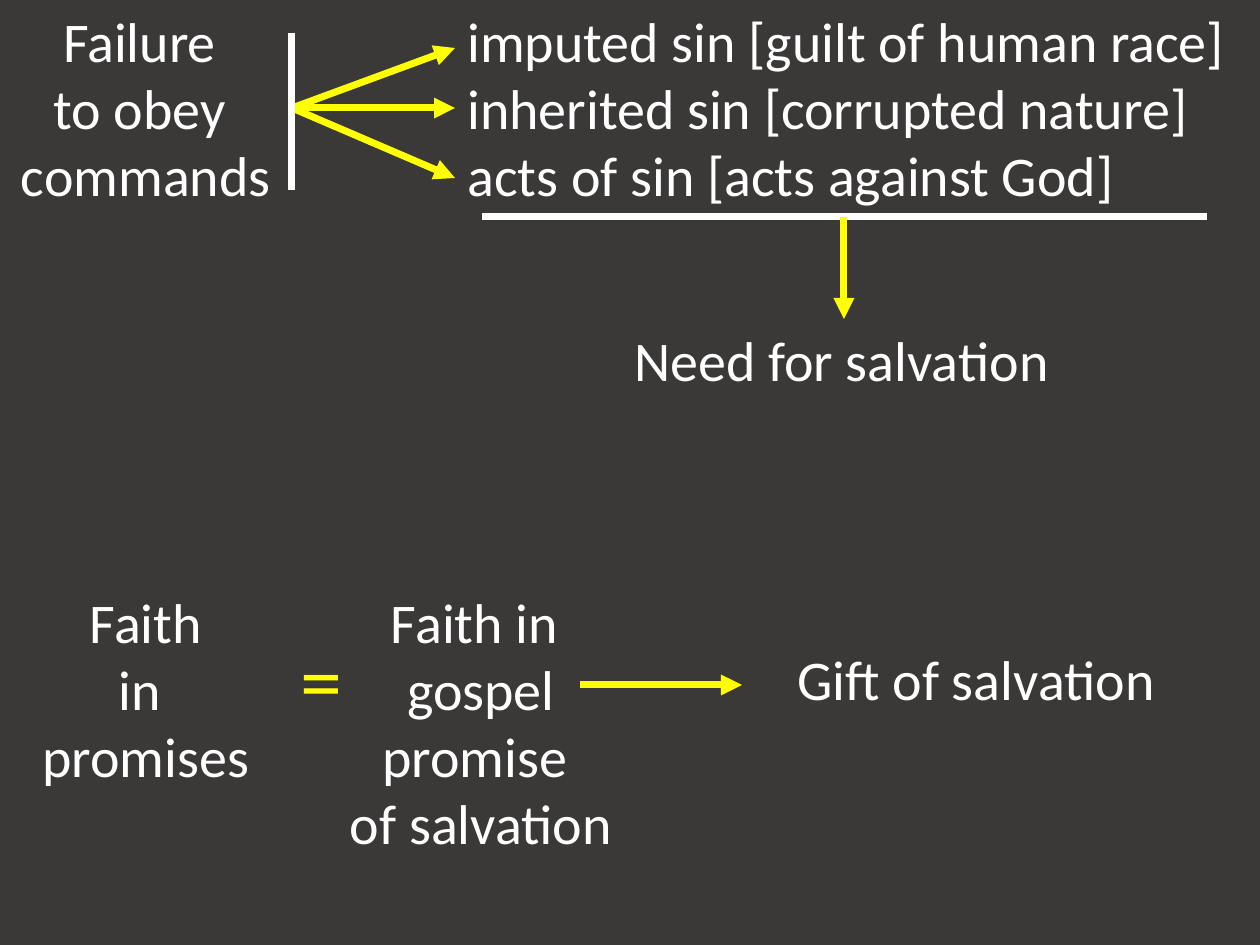
import pptx
import pptx.util
import pptx.dml.color
import pptx.enum.shapes
import pptx.enum.text
import pptx.oxml.ns
from lxml import etree

PX = 914400 / 126
DARK = pptx.dml.color.RGBColor(0x3B, 0x38, 0x38)
WHITE = pptx.dml.color.RGBColor(0xFF, 0xFF, 0xFF)
YELLOW = pptx.dml.color.RGBColor(0xFF, 0xFF, 0x00)
LEFT = pptx.enum.text.PP_ALIGN.LEFT
MID = pptx.enum.text.PP_ALIGN.CENTER


def emu(*sizes):
    return [round(size * PX) for size in sizes]


deck = pptx.Presentation()
deck.slide_width, deck.slide_height = emu(1260, 945)
slide = deck.slides.add_slide(deck.slide_layouts[6])
slide.background.fill.solid()
slide.background.fill.fore_color.rgb = DARK

# Text: place, lines, alignment, size, colour, fill
texts = [
    ((0, 0, 292, 217), ["Failure ", "to obey ", "commands"], MID, 32, WHITE, DARK),
    ((455, 0, 805, 217),
     ["imputed sin [guilt of human race]",
      "inherited sin [corrupted nature]",
      "acts of sin [acts against God]"], LEFT, 32, WHITE, DARK),
    ((622, 319, 444, 81), ["Need for salvation"], LEFT, 32, WHITE, DARK),
    ((0, 581, 292, 217), ["Faith", "in ", "promises"], MID, 32, WHITE, DARK),
    ((785, 638, 475, 81), ["Gift of salvation"], LEFT, 32, WHITE, DARK),
    ((335, 581, 292, 285),
     ["Faith in ", "gospel", "promise ", "of salvation"], MID, 32, WHITE, DARK),
    ((285, 621, 73, 115), ["="], MID, 48, YELLOW, None),
]
for place, lines, align, size, color, fill in texts:
    box = slide.shapes.add_textbox(*emu(*place))
    if fill is not None:
        box.fill.solid()
        box.fill.fore_color.rgb = fill
    frame = box.text_frame
    frame.word_wrap = True
    frame.auto_size = pptx.enum.text.MSO_AUTO_SIZE.SHAPE_TO_FIT_TEXT
    frame.text = "\n".join(lines)
    for para in frame.paragraphs:
        para.alignment = align
        para.font.name = "Calibri"
        para.font.size = pptx.util.Pt(size)
        para.font.color.rgb = color

# Yellow arrows and white rules: ends, colour
links = [
    ((292, 108, 455, 48), YELLOW),
    ((292, 108, 455, 108), YELLOW),
    ((292, 108, 455, 178), YELLOW),
    ((292, 33, 292, 190), WHITE),
    ((482, 217, 1207, 217), WHITE),
    ((844, 217, 844, 319), YELLOW),
    ((580, 685, 742, 685), YELLOW),
]
for ends, color in links:
    link = slide.shapes.add_connector(
        pptx.enum.shapes.MSO_CONNECTOR.STRAIGHT, *emu(*ends))
    link.line.color.rgb = color
    link.line.width = pptx.util.Pt(4)
    if color == YELLOW:
        etree.SubElement(link.line._get_or_add_ln(),
                         pptx.oxml.ns.qn("a:tailEnd"), type="triangle")
    etree.SubElement(link._element.spPr, pptx.oxml.ns.qn("a:effectLst"))

deck.save("out.pptx")
